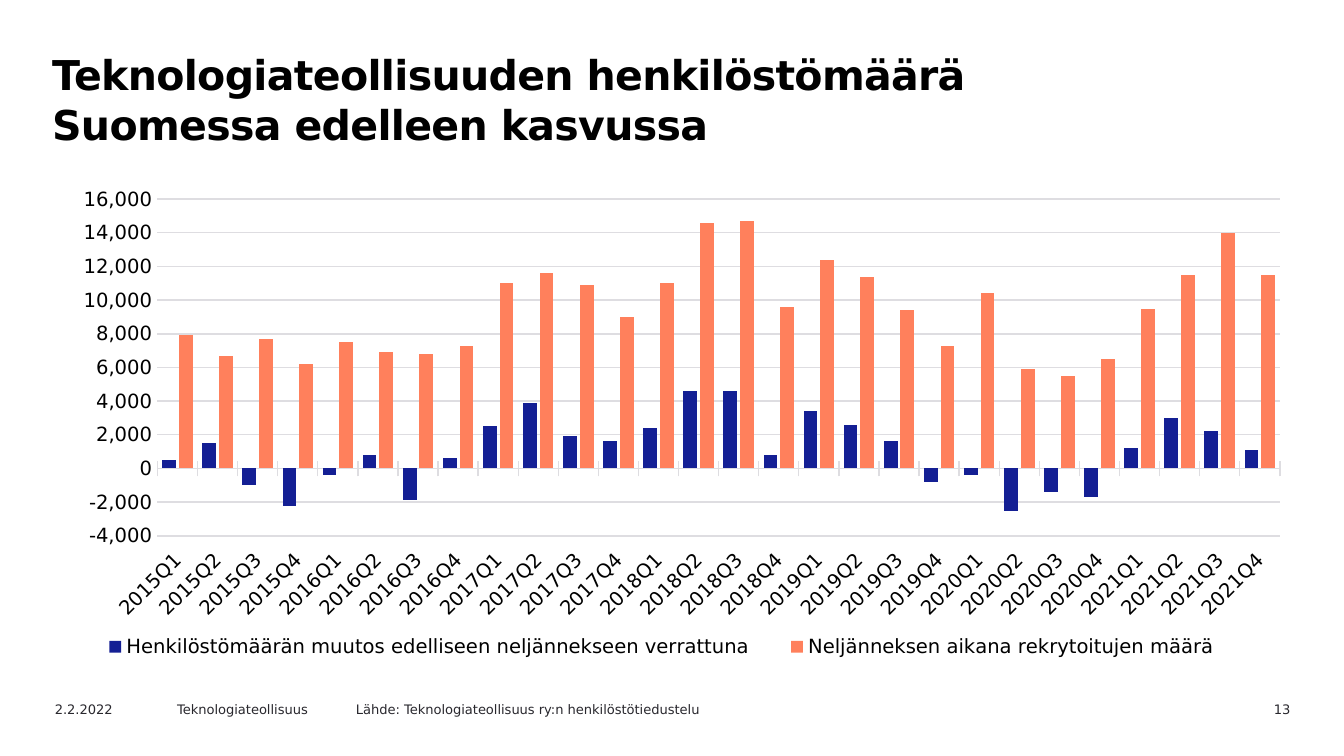
from lxml import etree
from pptx import Presentation
from pptx.chart.data import CategoryChartData
from pptx.dml.color import RGBColor
from pptx.enum.chart import XL_CHART_TYPE, XL_LEGEND_POSITION, XL_TICK_LABEL_POSITION, XL_TICK_MARK
from pptx.enum.text import MSO_ANCHOR, PP_ALIGN
from pptx.oxml.ns import qn
from pptx.util import Inches, Pt

BLACK = RGBColor(0x00, 0x00, 0x00)
DARK_GREY = RGBColor(0x29, 0x28, 0x2E)
GRID_GREY = RGBColor(0xDE, 0xDD, 0xE1)
NAVY = RGBColor(0x14, 0x1F, 0x94)
CORAL = RGBColor(0xFF, 0x80, 0x5C)
FONT = "DejaVu Sans"

QUARTERS = [f"{year}Q{quarter}" for year in range(2015, 2022) for quarter in range(1, 5)]
SERIES = [
    ("Henkilöstömäärän muutos edelliseen neljännekseen verrattuna", NAVY,
     [500, 1500, -1000, -2200, -400, 800, -1900, 600, 2500, 3900, 1900, 1600, 2400, 4600,
      4600, 800, 3400, 2600, 1600, -800, -400, -2500, -1400, -1700, 1200, 3000, 2200, 1100]),
    ("Neljänneksen aikana rekrytoitujen määrä", CORAL,
     [7900, 6700, 7700, 6200, 7500, 6900, 6800, 7300, 11000, 11600, 10900, 9000, 11000, 14600,
      14700, 9600, 12400, 11400, 9400, 7300, 10400, 5900, 5500, 6500, 9500, 11500, 14000, 11500]),
]


def style_font(font, size, color, bold=False):
    font.name = FONT
    font.size = Pt(size)
    font.bold = bold
    font.color.rgb = color


def add_text(slide, box, text, size, color, bold=False, align=PP_ALIGN.LEFT):
    """Add a one-paragraph text box and return its paragraph."""
    frame = slide.shapes.add_textbox(*map(Inches, box)).text_frame
    frame.word_wrap = True
    frame.vertical_anchor = MSO_ANCHOR.TOP
    paragraph = frame.paragraphs[0]
    paragraph.alignment = align
    run = paragraph.add_run()
    run.text = text
    style_font(run.font, size, color, bold)
    return paragraph


def add_title(slide, box):
    paragraph = add_text(slide, box, "Teknologiateollisuuden henkilöstömäärä Suomessa edelleen kasvussa",
                         22, BLACK, bold=True)
    paragraph.line_spacing = Pt(27)
    paragraph._p.get_or_add_pPr().set("marL", str(Inches(0.01)))
    paragraph.runs[0]._r.get_or_add_rPr().set("spc", "-33")


def add_footer(slide, box):
    left, top, width, height = box
    number_width = 0.94
    for offset, item_width, text in [
        (0, 1, "2.2.2022"),
        (0.91, 1.42, "Teknologiateollisuus"),
        (2.24, 3.25, "Lähde: Teknologiateollisuus ry:n henkilöstötiedustelu"),
    ]:
        add_text(slide, (left + offset, top, item_width, height), text, 7, DARK_GREY)
    add_text(slide, (left + width - number_width, top, number_width, height), "13",
             7, DARK_GREY, align=PP_ALIGN.RIGHT)


def set_layout(part, position, x, y, w, h, target=None):
    """Fix a chart part in fractions of the chart, as its child number position."""
    for old_layout in part.findall(qn("c:layout")):
        part.remove(old_layout)
    layout = etree.Element(qn("c:layout"))
    part.insert(position, layout)
    manual = etree.SubElement(layout, qn("c:manualLayout"))
    for tag, value in [("layoutTarget", target), ("xMode", "edge"), ("yMode", "edge"),
                       ("x", x), ("y", y), ("w", w), ("h", h)]:
        if value is not None:
            etree.SubElement(manual, qn(f"c:{tag}")).set("val", str(value))


def style_axes(chart):
    quarters = chart.category_axis
    quarters.tick_label_position = XL_TICK_LABEL_POSITION.LOW
    quarters.major_tick_mark = XL_TICK_MARK.CROSS
    quarters.has_major_gridlines = False
    quarters.format.line.color.rgb = GRID_GREY
    quarters.format.line.width = Pt(0.75)
    style_font(quarters.tick_labels.font, 10.5, BLACK)
    body = quarters._element.find(qn("c:txPr")).find(qn("a:bodyPr"))
    body.set("rot", "-2700000")
    body.set("vert", "horz")

    people = chart.value_axis
    people.minimum_scale = -4000
    people.major_tick_mark = XL_TICK_MARK.NONE
    people.format.line.fill.background()
    people.major_gridlines.format.line.color.rgb = GRID_GREY
    people.major_gridlines.format.line.width = Pt(0.75)
    people.tick_labels.number_format = "#,##0"
    people.tick_labels.number_format_is_linked = False
    style_font(people.tick_labels.font, 10.5, BLACK)


def add_legend(chart):
    chart.has_legend = True
    legend = chart.legend
    legend.position = XL_LEGEND_POSITION.BOTTOM
    legend.include_in_layout = False
    style_font(legend.font, 10.5, BLACK)
    set_layout(legend._element, 1, 0.03, 0.91, 0.94, 0.07)


def add_staff_chart(slide, box):
    data = CategoryChartData(number_format="#,##0")
    data.categories = QUARTERS
    for name, _, values in SERIES:
        data.add_series(name, values)
    chart = slide.shapes.add_chart(XL_CHART_TYPE.COLUMN_CLUSTERED, *map(Inches, box), data).chart
    style_font(chart.font, 10, DARK_GREY)
    chart.has_title = False

    plot = chart.plots[0]
    plot.vary_by_categories = False
    plot.gap_width = 70
    plot.overlap = -21
    for series, (_, color, _) in zip(plot.series, SERIES):
        series.invert_if_negative = False
        series.format.fill.solid()
        series.format.fill.fore_color.rgb = color
    style_axes(chart)
    add_legend(chart)
    set_layout(chart._chartSpace.chart.plotArea, 0, 0.096, 0.064, 0.899, 0.663, "inner")


def main():
    presentation = Presentation()
    presentation.slide_width = Inches(10)
    presentation.slide_height = Inches(10) * 9 // 16
    slide = presentation.slides.add_slide(presentation.slide_layouts[6])
    add_title(slide, (0.28, 0.31, 8.58, 0.71))
    add_staff_chart(slide, (0.28, 1.24, 9.29, 3.78))
    add_footer(slide, (0.31, 5.17, 9.39, 0.18))
    presentation.save("out.pptx")


if __name__ == "__main__":
    main()
